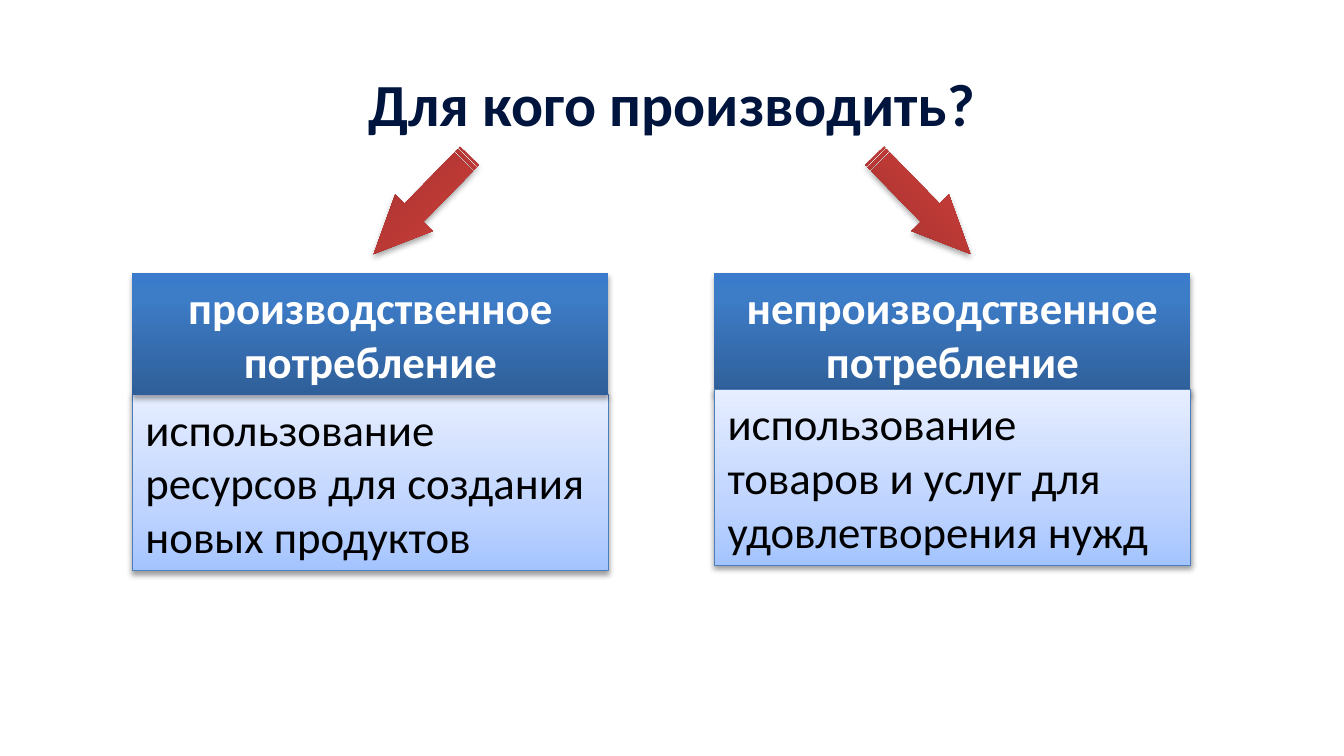
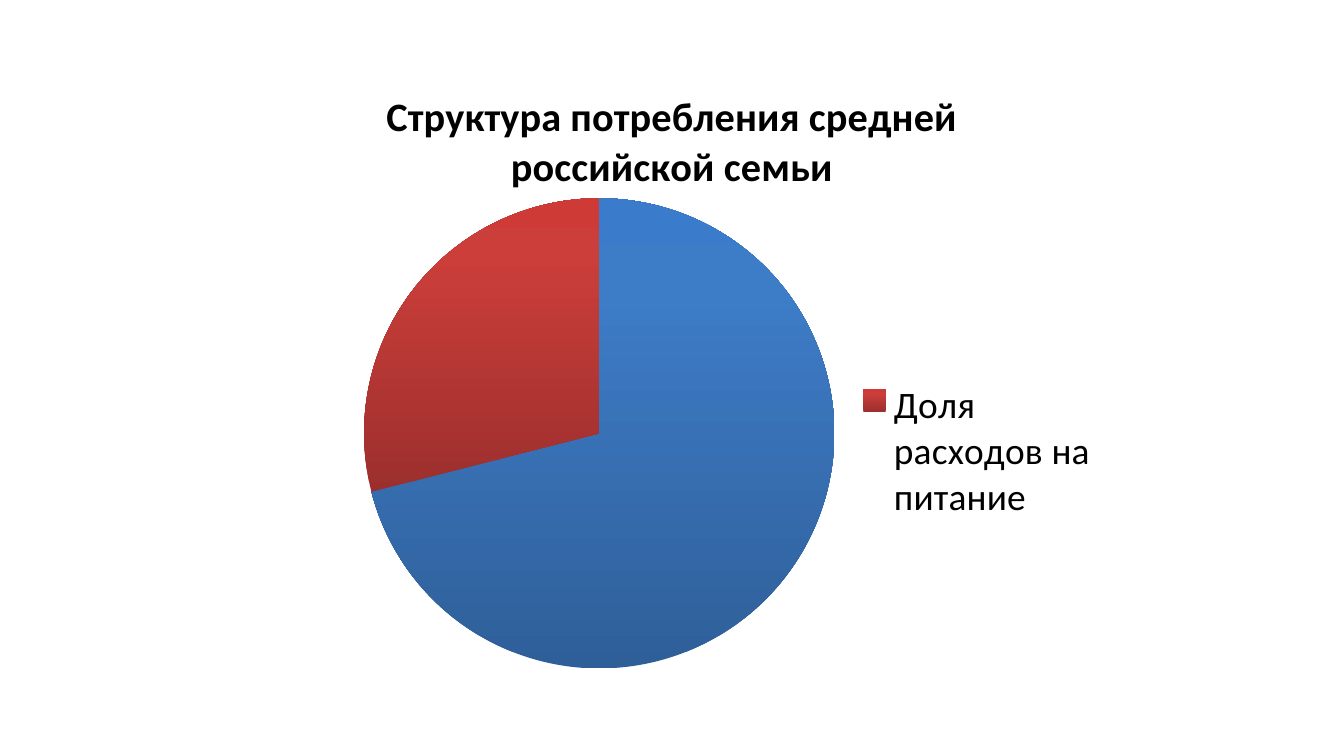
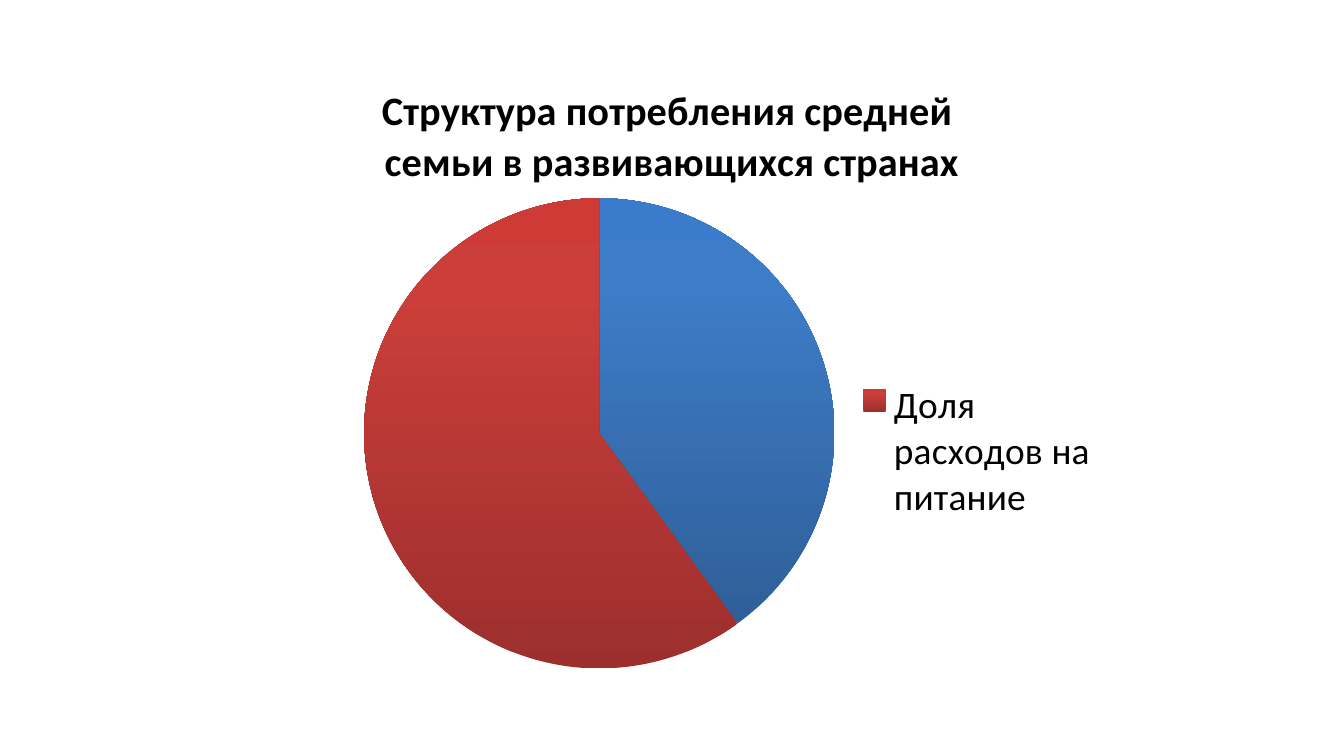
import pptx
import pptx.chart.data
import pptx.dml.color
import pptx.enum.chart
import pptx.enum.shapes
import pptx.enum.text
import pptx.oxml
import pptx.oxml.ns
import pptx.util
from pptx.dml.color import RGBColor
from pptx.util import Cm

FONT = "Calibri"
NAVY = RGBColor(0x00, 0x15, 0x3E)
WHITE = RGBColor(0xFF, 0xFF, 0xFF)
BLACK = RGBColor(0x00, 0x00, 0x00)
OUTLINE = RGBColor(0x4B, 0x7E, 0xBC)
PALE_BLUE = (
    (0, RGBColor(0xA4, 0xC4, 0xFF)),
    (35, RGBColor(0xBF, 0xD4, 0xFF)),
    (100, RGBColor(0xE6, 0xEE, 0xFF)),
)
BLUE = (
    (0, RGBColor(0x2F, 0x5F, 0x99)),
    (80, RGBColor(0x3D, 0x7C, 0xC7)),
    (100, RGBColor(0x3A, 0x7C, 0xCB)),
)
RED = (
    (0, RGBColor(0x9C, 0x2F, 0x2D)),
    (80, RGBColor(0xCB, 0x3E, 0x3A)),
    (100, RGBColor(0xCE, 0x3B, 0x37)),
)

CARD_WIDTH = Cm(9)
HEADING_HEIGHT = Cm(2.31)
DEFINITION_HEIGHT = Cm(3.33)
CARD_TOP = Cm(5.16)
LEFT_CARD = Cm(2.5)
RIGHT_CARD = Cm(13.5)
CHART_BOX = (Cm(4.24), Cm(1.14), Cm(16.93), Cm(11.64))
PLOT_BOX = (0.156, 0.212, 0.525, 0.788)
LEGEND_BOX = (0.7, 0.51, 0.28, 0.25)
CATEGORIES = ("", "Доля расходов на питание")


def parse_element(markup):
    """Return the drawing or chart element that the markup describes."""
    namespaces = pptx.oxml.ns.nsdecls("a", "c")
    return pptx.oxml.parse_xml(f"<root {namespaces}>{markup}</root>")[0]


def apply_gradient(fill, properties, stops):
    """Fill an element with a gradient that rises from bottom to top."""
    fill.gradient()
    fill.gradient_angle = 90
    stop_list = properties.find(".//" + pptx.oxml.ns.qn("a:gsLst"))
    for stop in list(stop_list):
        stop_list.remove(stop)
    for percent, color in stops:
        stop_list.append(parse_element(
            f'<a:gs pos="{percent * 1000}"><a:srgbClr val="{color}"/></a:gs>'))


def add_shadow(shape, distance, opacity):
    """Give a shape a soft shadow that falls downwards."""
    shape.shadow.inherit = False
    effects = shape._element.spPr.find(pptx.oxml.ns.qn("a:effectLst"))
    effects.append(parse_element(
        f'<a:outerShdw blurRad="40000" dist="{distance}" dir="5400000" rotWithShape="0">'
        f'<a:srgbClr val="{BLACK}"><a:alpha val="{opacity * 1000}"/></a:srgbClr>'
        "</a:outerShdw>"))


def add_gradient_shape(slide, kind, box, stops, distance=23000, opacity=35):
    """Add a borderless preset shape with a gradient and a shadow."""
    shape = slide.shapes.add_shape(kind, *box)
    apply_gradient(shape.fill, shape._element.spPr, stops)
    shape.line.fill.background()
    add_shadow(shape, distance, opacity)
    return shape


def format_font(font, size, color, bold):
    """Set the shared typeface with a size, colour and weight."""
    font.name, font.size, font.bold = FONT, pptx.util.Pt(size), bold
    font.color.rgb = color


def write_text(shape, text, size, color, bold, alignment):
    """Write one wrapped paragraph into a shape."""
    frame = shape.text_frame
    frame.word_wrap = True
    frame.vertical_anchor = pptx.enum.text.MSO_ANCHOR.TOP
    frame.text = text
    paragraph = frame.paragraphs[0]
    paragraph.alignment = alignment
    format_font(paragraph.runs[0].font, size, color, bold)


def add_heading(slide, left, top, text):
    """Add the dark heading of a consumption card."""
    box = (left, top, CARD_WIDTH, HEADING_HEIGHT)
    shape = add_gradient_shape(slide, pptx.enum.shapes.MSO_SHAPE.RECTANGLE, box, BLUE)
    write_text(shape, text, 24, WHITE, True, pptx.enum.text.PP_ALIGN.CENTER)


def add_definition(slide, left, top, text):
    """Add the pale definition of a consumption card."""
    box = (left, top, CARD_WIDTH, DEFINITION_HEIGHT)
    shape = add_gradient_shape(
        slide, pptx.enum.shapes.MSO_SHAPE.RECTANGLE, box, PALE_BLUE, 20000, 38)
    shape.line.color.rgb = OUTLINE
    shape.line.width = pptx.util.Pt(0.75)
    write_text(shape, text, 24, BLACK, False, pptx.enum.text.PP_ALIGN.LEFT)


def add_arrow(slide, left, top, rotation):
    """Add a striped arrow that points at a card."""
    arrow = add_gradient_shape(
        slide, pptx.enum.shapes.MSO_SHAPE.STRIPED_RIGHT_ARROW,
        (left, top, Cm(2.59), Cm(0.99)), RED)
    arrow.adjustments[0] = 0.5
    arrow.adjustments[1] = 1.1
    arrow.rotation = rotation


def build_consumption_slide(slide):
    """Compare the two kinds of consumption."""
    add_definition(slide, LEFT_CARD, CARD_TOP + Cm(2.3),
                   "использование ресурсов для создания новых продуктов")
    title = slide.shapes.add_textbox(Cm(4.6), Cm(1.14), Cm(16.2), Cm(1.63))
    write_text(title, "Для кого производить?", 32, NAVY, True,
               pptx.enum.text.PP_ALIGN.CENTER)
    for left, rotation in ((Cm(6.67), 134.3), (Cm(16.14), 45.7)):
        add_arrow(slide, left, Cm(3.38), rotation)
    add_heading(slide, LEFT_CARD, CARD_TOP, "производственное потребление")
    add_heading(slide, RIGHT_CARD, CARD_TOP, "непроизводственное потребление")
    add_definition(slide, RIGHT_CARD, CARD_TOP + Cm(2.2),
                   "использование товаров и услуг для удовлетворения нужд")


def create_layout(box, target=""):
    """Return a manual chart layout for a box given in shares of the chart."""
    sizes = "".join(f'<c:{name} val="{value}"/>' for name, value in zip("xywh", box))
    return parse_element(
        f'<c:layout><c:manualLayout>{target}<c:xMode val="edge"/>'
        f'<c:yMode val="edge"/>{sizes}</c:manualLayout></c:layout>')


def remove_layout(element):
    """Remove the layout of a chart part."""
    for layout in element.findall(pptx.oxml.ns.qn("c:layout")):
        element.remove(layout)


def format_title(chart, text):
    """Set the bold title of a chart."""
    chart.has_title = True
    frame = chart.chart_title.text_frame
    frame.text = text
    for paragraph in frame.paragraphs:
        format_font(paragraph.runs[0].font, 21.6, BLACK, True)
    chart.chart_title.include_in_layout = False


def format_legend(chart):
    """Show only the food share in the legend on the right."""
    chart.has_legend = True
    legend = chart.legend
    legend.position = pptx.enum.chart.XL_LEGEND_POSITION.RIGHT
    legend.include_in_layout = False
    format_font(legend.font, 20, BLACK, False)
    remove_layout(legend._element)
    entry = parse_element(
        '<c:legendEntry><c:idx val="0"/><c:delete val="1"/></c:legendEntry>')
    legend._element.find(pptx.oxml.ns.qn("c:legendPos")).addnext(entry)
    entry.addnext(create_layout(LEGEND_BOX))


def place_plot(chart):
    """Fix the inner plot area within the chart."""
    plot_area = chart._chartSpace.find(".//" + pptx.oxml.ns.qn("c:plotArea"))
    remove_layout(plot_area)
    plot_area.insert(0, create_layout(PLOT_BOX, '<c:layoutTarget val="inner"/>'))


def build_pie_slide(slide, box, title, series_name, values):
    """Show the share of food in family spending as a pie."""
    data = pptx.chart.data.CategoryChartData()
    data.categories = CATEGORIES
    data.add_series(series_name, values)
    chart = slide.shapes.add_chart(
        pptx.enum.chart.XL_CHART_TYPE.PIE, *box, data).chart
    format_font(chart.font, 18, BLACK, None)
    format_title(chart, title)
    format_legend(chart)
    place_plot(chart)
    plot = chart.plots[0]
    plot.vary_by_categories = True
    for index, stops in enumerate((BLUE, RED)):
        point_format = plot.series[0].points[index].format
        point_format.line.fill.background()
        properties = chart._chartSpace.xpath(".//c:dPt/c:spPr")[index]
        apply_gradient(point_format.fill, properties, stops)


def main():
    """Build and save the presentation."""
    presentation = pptx.Presentation()
    presentation.slide_width = Cm(25.4)
    presentation.slide_height = Cm(14.29)
    blank = presentation.slide_layouts[6]
    build_consumption_slide(presentation.slides.add_slide(blank))
    russian_title = "Структура потребления средней российской семьи"
    pies = (
        (russian_title, russian_title, (71, 29)),
        ("Структура потребления средней \nсемьи в развивающихся странах",
         "Series 1", (40, 60)),
    )
    for title, series_name, values in pies:
        build_pie_slide(presentation.slides.add_slide(blank), CHART_BOX,
                        title, series_name, values)
    presentation.save("out.pptx")


if __name__ == "__main__":
    main()
